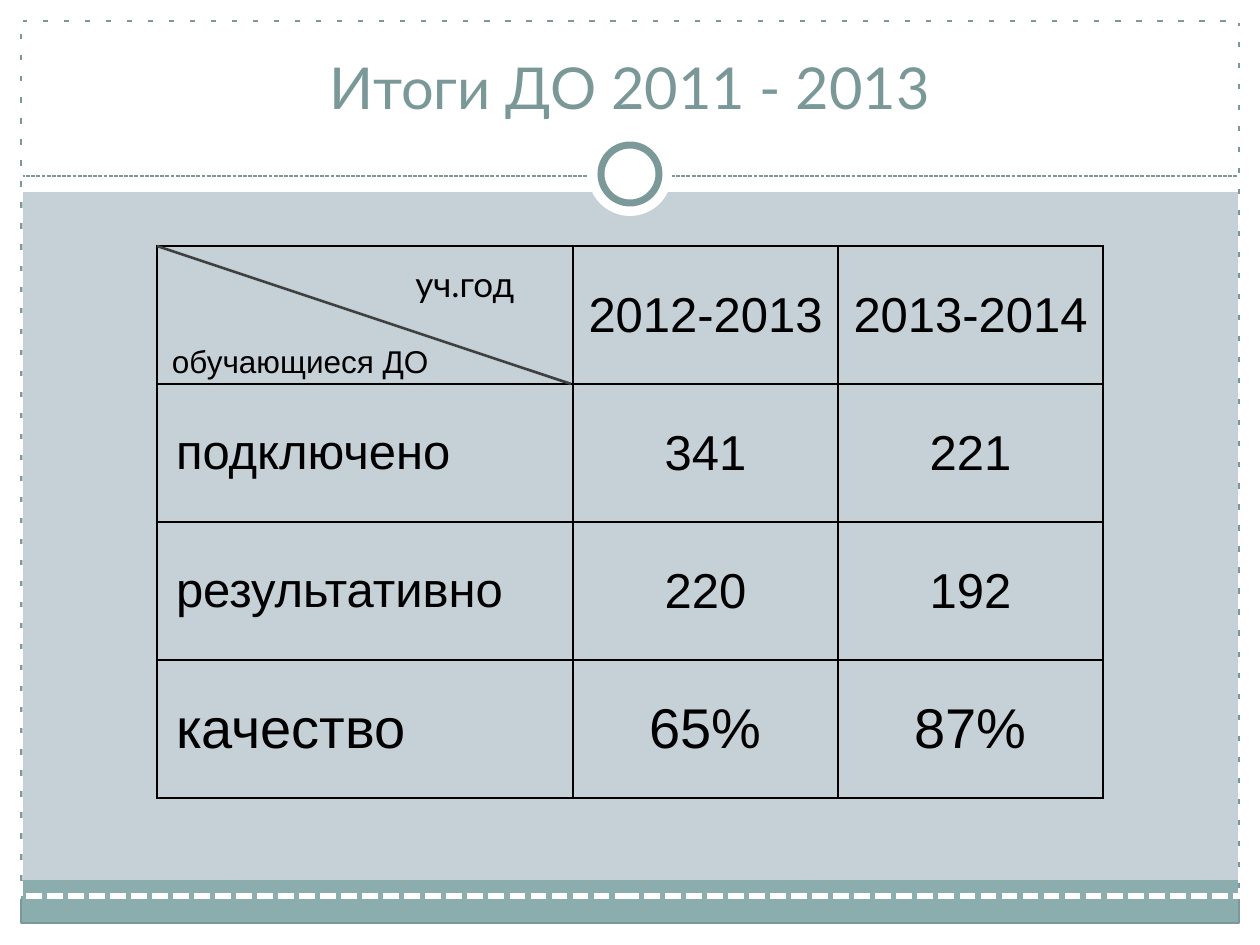
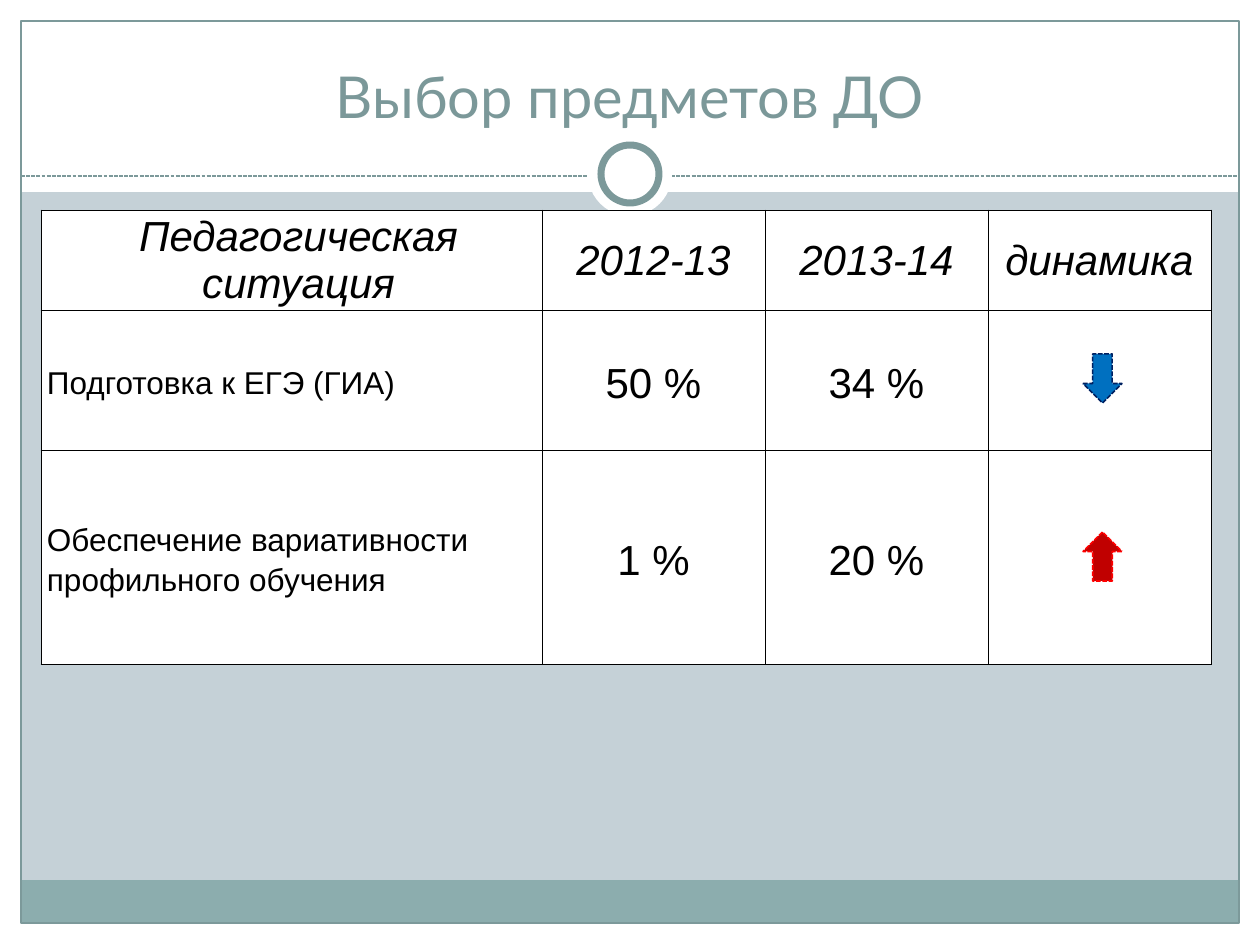
"""Build two slides on the results of distance learning and the choice of subjects."""
import pptx
import pptx.util
import pptx.dml.color
import pptx.enum.dml
import pptx.enum.shapes
import pptx.enum.text
import pptx.oxml
import pptx.oxml.ns

RGBColor = pptx.dml.color.RGBColor
SHAPE = pptx.enum.shapes.MSO_SHAPE
ALIGN = pptx.enum.text.PP_ALIGN
ANCHOR = pptx.enum.text.MSO_ANCHOR

PX = 914400 / 126
SLIDE_WIDTH, SLIDE_HEIGHT = 1260, 945
MARGIN = 21
INNER_WIDTH = SLIDE_WIDTH - 2 * MARGIN
TITLE_FONT, TABLE_FONT = "Lato", "Arial"

BACKGROUND = RGBColor(0xC5, 0xD1, 0xD7)
WHITE = RGBColor(0xFF, 0xFF, 0xFF)
BLACK = RGBColor(0x00, 0x00, 0x00)
BAND = RGBColor(0x8C, 0xAD, 0xAE)
FRAME = RGBColor(0x7C, 0x99, 0x9A)
TITLE = RGBColor(0x7B, 0x98, 0x99)
DIAGONAL = RGBColor(0x40, 0x40, 0x40)
BLUE = RGBColor(0x00, 0x70, 0xC0)
NAVY = RGBColor(0x00, 0x20, 0x60)
DARK_RED = RGBColor(0xC0, 0x00, 0x00)
RED = RGBColor(0xFF, 0x00, 0x00)


def emu(*lengths):
    return [pptx.util.Emu(round(length * PX)) for length in lengths]


def set_line(line, color, width, dashed=False):
    line.color.rgb = color
    line.width = pptx.util.Pt(width)
    if dashed:
        line.dash_style = pptx.enum.dml.MSO_LINE.SQUARE_DOT


def set_fill(fill, color):
    if color is None:
        fill.background()
    else:
        fill.solid()
        fill.fore_color.rgb = color


def add_shape(slide, kind, box, fill=None, line=None, width=0.75, dashed=False):
    shape = slide.shapes.add_shape(kind, *emu(*box))
    shape.shadow.inherit = False
    set_fill(shape.fill, fill)
    if line is None:
        shape.line.fill.background()
    else:
        set_line(shape.line, line, width, dashed)
    return shape


def add_line(slide, start, end, color, width, dashed=False):
    connector = slide.shapes.add_connector(
        pptx.enum.shapes.MSO_CONNECTOR.STRAIGHT, *emu(*start, *end))
    set_line(connector.line, color, width, dashed)
    properties = connector._element.spPr
    properties.append(pptx.oxml.parse_xml(
        f'<a:effectLst {pptx.oxml.ns.nsdecls("a")}/>'))


def write_text(frame, text, font, size, color, align=ALIGN.LEFT, italic=False, spacing=None):
    frame.text = text
    paragraph = frame.paragraphs[0]
    paragraph.alignment = align
    if spacing:
        paragraph.line_spacing = spacing
    run_font = paragraph.runs[0].font
    run_font.name = font
    run_font.size = pptx.util.Pt(size)
    run_font.color.rgb = color
    run_font.italic = italic


def add_text(slide, box, text, size, color, align=ALIGN.LEFT, anchor=ANCHOR.TOP):
    frame = slide.shapes.add_textbox(*emu(*box)).text_frame
    frame.word_wrap = True
    frame.vertical_anchor = anchor
    write_text(frame, text, TITLE_FONT, size, color, align)


def add_borders(cell, width):
    properties = cell._tc.get_or_add_tcPr()
    for side in ("lnL", "lnR", "lnT", "lnB"):
        properties.append(pptx.oxml.parse_xml(
            f'<a:{side} {pptx.oxml.ns.nsdecls("a")} w="{round(width * 12700)}">'
            f'<a:solidFill><a:srgbClr val="{BLACK}"/></a:solidFill></a:{side}>'))


def add_table(slide, corner, columns, rows, border, fill=None):
    shape = slide.shapes.add_table(
        len(rows), len(columns), *emu(*corner, sum(columns), sum(rows)))
    table = shape.table
    for column, width in zip(table.columns, emu(*columns)):
        column.width = width
    for row, height in zip(table.rows, emu(*rows)):
        row.height = height
    for cell in table.iter_cells():
        add_borders(cell, border)
        set_fill(cell.fill, fill)
    return table


def write_cell(cell, text, size, insets, anchor=ANCHOR.MIDDLE, **style):
    cell.margin_left, cell.margin_top, cell.margin_right, cell.margin_bottom = emu(*insets)
    cell.vertical_anchor = anchor
    write_text(cell.text_frame, text, TABLE_FONT, size, BLACK, **style)


def add_framed_slide(presentation, title, title_box):
    slide = presentation.slides.add_slide(presentation.slide_layouts[6])
    set_fill(slide.background.fill, BACKGROUND)
    for box in ((0, 924, SLIDE_WIDTH, MARGIN), (0, 0, SLIDE_WIDTH, 192),
                (0, 0, MARGIN, SLIDE_HEIGHT),
                (SLIDE_WIDTH - MARGIN, 0, MARGIN, SLIDE_HEIGHT)):
        add_shape(slide, SHAPE.RECTANGLE, box, WHITE)
    add_shape(slide, SHAPE.RECTANGLE, (MARGIN, 880, INNER_WIDTH, 43), BAND)
    add_shape(slide, SHAPE.RECTANGLE, (MARGIN, MARGIN, INNER_WIDTH, 902), line=FRAME)
    add_line(slide, (MARGIN, 176), (SLIDE_WIDTH - MARGIN, 176), FRAME, 0.75, dashed=True)
    add_shape(slide, SHAPE.OVAL, (588, 132, 84, 84), WHITE)
    add_shape(slide, SHAPE.OVAL, (601, 145, 58, 58), WHITE, FRAME, 4)
    add_text(slide, title_box, title, 33, TITLE, ALIGN.CENTER, ANCHOR.BOTTOM)
    return slide


def add_results_slide(presentation):
    slide = add_framed_slide(presentation, "Итоги ДО 2011 - 2013", (63, 29, 1134, 98))
    left, top, header_width, row_height = 157, 246, 416, 138
    table = add_table(slide, (left, top), (header_width, 265, 265), [row_height] * 4, 1)
    results = (
        (28, "обучающиеся ДО", "2012-2013", "2013-2014"),
        (28, "подключено", "341", "221"),
        (28, "результативно", "220", "192"),
        (32, "качество", "65%", "87%"),
    )
    for row, (size, label, *values) in enumerate(results):
        if row == 0:
            write_cell(table.cell(row, 0), label, 18, (15, 1, 1, 4), ANCHOR.BOTTOM)
        else:
            write_cell(table.cell(row, 0), label, size, (19, 19, 19, 19))
        for column, value in enumerate(values, 1):
            write_cell(table.cell(row, column), value, size, (1, 1, 1, 0), align=ALIGN.CENTER)
    add_shape(slide, SHAPE.RECTANGLE, (20, 20, 1221, 876), line=WHITE, width=3, dashed=True)
    add_line(slide, (left, top), (left + header_width - 2, top + row_height), DIAGONAL, 1.5)
    add_text(slide, (403, 256, 147, 55), "уч.год", 20, BLACK)


def add_subjects_slide(presentation):
    slide = add_framed_slide(presentation, "Выбор предметов ДО", (42, 32, 1176, 104))
    table = add_table(slide, (41, 210), (501, 223, 223, 223), (94, 140, 214), 0.5, WHITE)
    headings = ("Педагогическая ситуация", "2012-13", "2013-14", "динамика")
    for column, heading in enumerate(headings):
        write_cell(table.cell(0, column), heading, 24, (0 if column else 14, 0, 0, 0),
                   align=ALIGN.CENTER, italic=True)
    situations = (
        ("Подготовка к ЕГЭ (ГИА)", "50 %", "34 %"),
        ("Обеспечение вариативности профильного обучения", "1 %", "20 %"),
    )
    for row, (situation, *shares) in enumerate(situations, 1):
        write_cell(table.cell(row, 0), situation, 18, (6, 0, 6, 0), spacing=1.15)
        for column, share in enumerate(shares, 1):
            write_cell(table.cell(row, column), share, 24, (6, 0, 6, 0),
                       align=ALIGN.CENTER, spacing=1.15)
    for top, fill, line, rotation in ((354, BLUE, NAVY, 0), (532, DARK_RED, RED, 180)):
        arrow = add_shape(slide, SHAPE.DOWN_ARROW, (1083, top, 39, 49), fill, line, 0.9, True)
        arrow.rotation = rotation


def main():
    presentation = pptx.Presentation()
    presentation.slide_width, presentation.slide_height = emu(SLIDE_WIDTH, SLIDE_HEIGHT)
    add_results_slide(presentation)
    add_subjects_slide(presentation)
    presentation.save("out.pptx")


if __name__ == "__main__":
    main()
